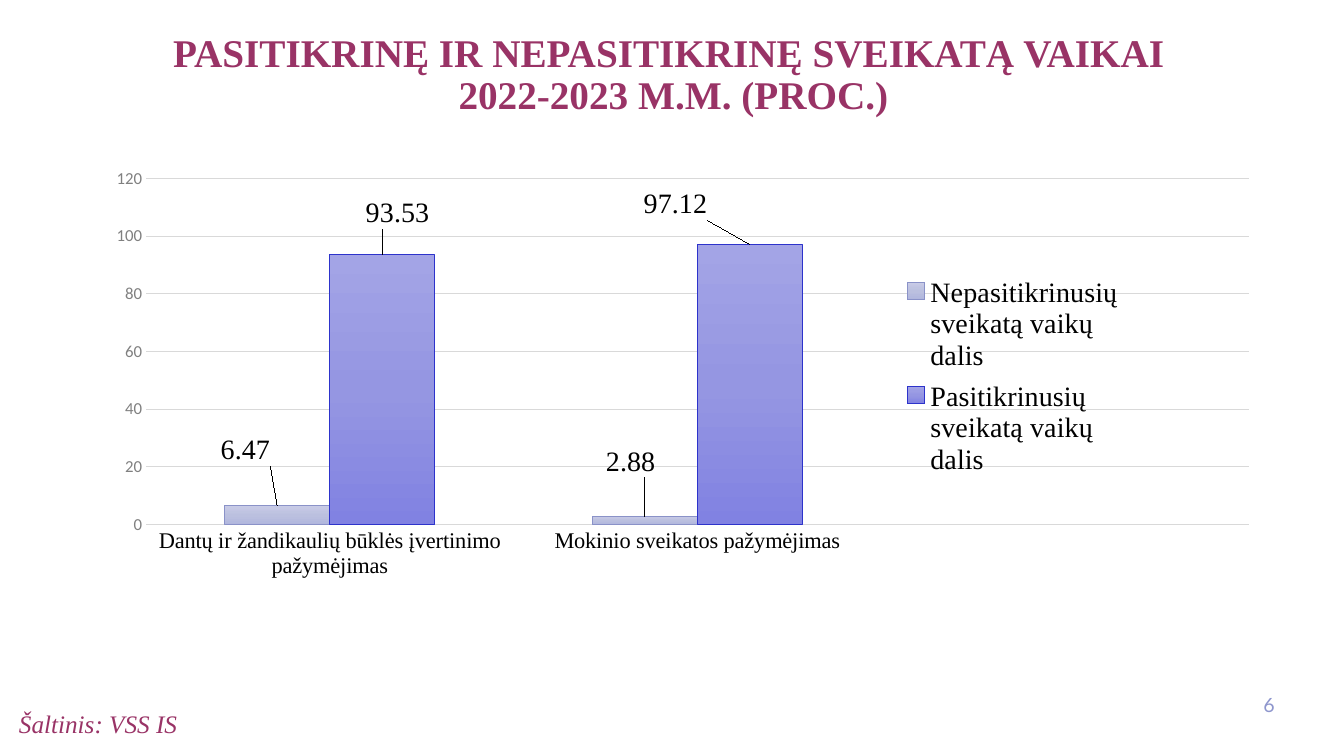
from lxml import etree
from pptx import Presentation
from pptx import util as u
from pptx.chart.data import CategoryChartData
from pptx.dml.color import RGBColor
from pptx.enum import chart as ch, text
from pptx.oxml import parse_xml
from pptx.oxml.ns import nsdecls, qn

SERIF, PLUM = "Times New Roman", "993366"
W, H = 13.33, 7.5
MID, TOP = text.MSO_ANCHOR.MIDDLE, text.MSO_ANCHOR.TOP
LEFT, CENTER, RIGHT = text.PP_ALIGN.LEFT, text.PP_ALIGN.CENTER, text.PP_ALIGN.RIGHT

TEXTS = [
    ("PASITIKRINĘ IR NEPASITIKRINĘ SVEIKATĄ VAIKAI\v 2022-2023 M.M. (PROC.)",
     (-0.12, 0.28, 13.5, 1.38), CENTER, TOP, (28, PLUM, SERIF, True, False)),
    ("Šaltinis: VSS IS", (0.09, 6.98, 6.3, 0.38), LEFT, TOP, (18, PLUM, SERIF, False, True)),
    ("6", (12.22, 6.79, 0.52, 0.4), RIGHT, MID, (14, "8E96CD", "Lato", False, False)),
]
CHART_BOX = (0.91, 1.57, 11.71, 5.41)
PLOT_SHARE = (0.046, 0.037, 0.934, 0.635)
LEGEND_SHARE = (0.685, 0.2, 0.19, 0.4)
CATEGORIES = ["Dantų ir žandikaulių būklės įvertinimo pažymėjimas",
              "Mokinio sveikatos pažymėjimas", ""]
SERIES = [
    ("Nepasitikrinusių sveikatą vaikų dalis", (6.47, 2.88, None),
     ("C8CBE6", "BBC0DF", "B1B6DD"), "8A92C8", ((-0.027, -0.066), (-0.012, -0.064))),
    ("Pasitikrinusių sveikatą vaikų dalis", (93.53, 97.12, None),
     ("A3A4E6", "9596E2", "8182E2"), "2D33CB", ((0.013, -0.04), (-0.063, -0.037))),
]


def color(value):
    return RGBColor.from_string(value)


def style(font, size, value, name, bold=False, italic=False):
    font.size, font.name, font.bold, font.italic = u.Pt(size), name, bold, italic
    font.color.rgb = color(value)


def add_text(s, words, box, align, anchor, look):
    tf = s.shapes.add_textbox(*map(u.Inches, box)).text_frame
    tf.word_wrap, tf.vertical_anchor = True, anchor
    p = tf.paragraphs[0]
    p.text, p.alignment = words, align
    p.line_spacing = 0.9 if align == CENTER else 1.0
    for r in p.runs:
        style(r.font, *look)


def layout(parent, after, share, target=None, absolute=True):
    for old in parent.findall(qn("c:layout")):
        parent.remove(old)
    lay = etree.Element(qn("c:layout"))
    manual = etree.SubElement(lay, qn("c:manualLayout"))
    if target:
        etree.SubElement(manual, qn("c:layoutTarget"), val=target)
    if absolute:
        for mode in ("xMode", "yMode"):
            etree.SubElement(manual, qn("c:" + mode), val="edge")
    for tag, value in zip("xywh", share):
        etree.SubElement(manual, qn("c:" + tag), val=str(value))
    if after is None:
        parent.insert(0, lay)
    else:
        parent.find(qn(after)).addnext(lay)


def gradient(fill_format, stops):
    fill_format.fill.gradient()
    fill_format.fill.gradient_angle = 270
    grad = fill_format.fill._xPr.find(qn("a:gradFill"))
    gs = "".join(f'<a:gs pos="{i * 50000}"><a:srgbClr val="{c}"/></a:gs>'
                 for i, c in enumerate(stops))
    grad.replace(grad.find(qn("a:gsLst")),
                 parse_xml(f'<a:gsLst {nsdecls("a")}>{gs}</a:gsLst>'))


def add_chart(s):
    data = CategoryChartData()
    data.categories = CATEGORIES
    for name, values, *_ in SERIES:
        data.add_series(name, values)
    chart = s.shapes.add_chart(ch.XL_CHART_TYPE.COLUMN_CLUSTERED,
                               *map(u.Inches, CHART_BOX), data).chart
    style(chart.font, 10, "000000", "Calibri")
    chart.has_title = False
    plot = chart.plots[0]
    plot.gap_width, plot.overlap, plot.vary_by_categories = 150, 0, False

    for axis, look in ((chart.category_axis, (16, "000000", SERIF)),
                       (chart.value_axis, (12, "808080", "Calibri"))):
        style(axis.tick_labels.font, *look)
        axis.major_tick_mark = axis.minor_tick_mark = ch.XL_TICK_MARK.NONE
        axis.format.line.fill.background()
    axis = chart.value_axis
    axis.minimum_scale, axis.maximum_scale, axis.major_unit = 0, 120, 20
    grid = axis.major_gridlines.format.line
    grid.width, grid.color.rgb = u.Pt(0.75), color("D9D9D9")

    for series, (_, _, stops, edge, shifts) in zip(plot.series, SERIES):
        gradient(series.format, stops)
        series.format.line.width = u.Pt(0.75)
        series.format.line.color.rgb = color(edge)
        for i, shift in enumerate(shifts):
            label = series.points[i].data_label
            style(label.font, 20, "000000", SERIF)
            label.position = ch.XL_LABEL_POSITION.OUTSIDE_END
            layout(label._dLbl, "c:idx", shift, absolute=False)

    chart.has_legend = True
    legend = chart.legend
    legend.position, legend.include_in_layout = ch.XL_LEGEND_POSITION.BOTTOM, True
    style(legend.font, 20, "000000", SERIF)
    layout(legend._element, "c:legendPos", LEGEND_SHARE)
    layout(chart._chartSpace.chart.plotArea, None, PLOT_SHARE, "inner")


def main():
    prs = Presentation()
    prs.slide_width, prs.slide_height = u.Inches(W), u.Inches(H)
    s = prs.slides.add_slide(prs.slide_layouts[6])
    for item in TEXTS:
        add_text(s, *item)
    add_chart(s)
    prs.save("out.pptx")


if __name__ == "__main__":
    main()
